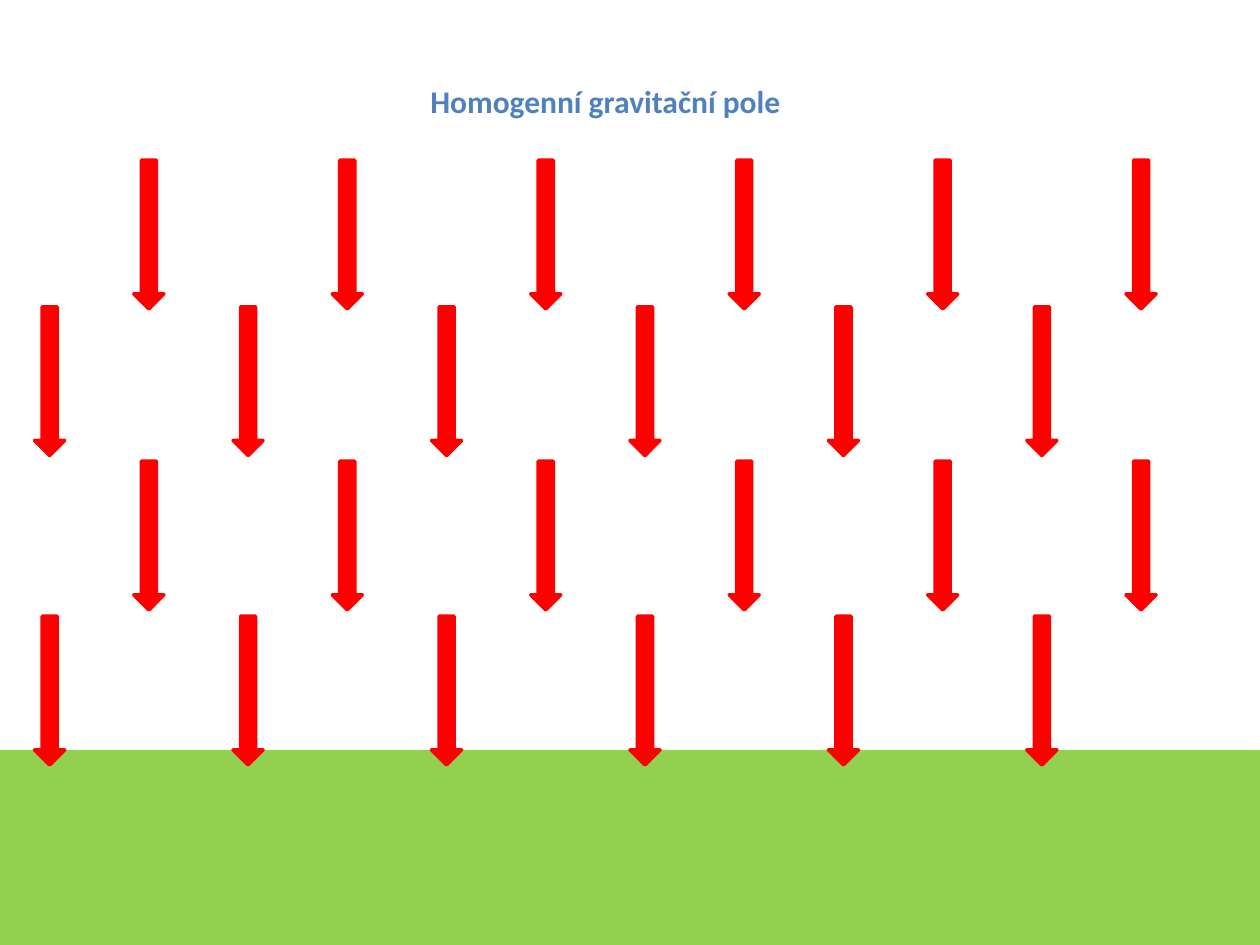
from dataclasses import dataclass

from pptx import Presentation
from pptx.dml.color import RGBColor
from pptx.enum.shapes import MSO_SHAPE
from pptx.enum.text import MSO_ANCHOR, PP_ALIGN
from pptx.util import Pt

RECTANGLE = MSO_SHAPE.RECTANGLE
RIGHT_ARROW = MSO_SHAPE.RIGHT_ARROW
CENTER = PP_ALIGN.CENTER
TOP = MSO_ANCHOR.TOP


@dataclass(frozen=True)
class Theme:
    font: str = "Calibri"
    title_size: float = 18
    title: RGBColor = RGBColor(0x4F, 0x81, 0xBD)
    ground: RGBColor = RGBColor(0x92, 0xD0, 0x50)
    force: RGBColor = RGBColor(0xFF, 0x00, 0x00)


@dataclass(frozen=True)
class ForceRow:
    first_x: float
    center_y: float


THEME = Theme()
ARROWS_PER_ROW = 6
ARROW_STEP = 113.4
ARROW_LENGTH = 85
ARROW_WIDTH = 17.2
LEFT_X = 28.35
SHIFTED_X = LEFT_X + ARROW_STEP / 2
FORCE_ROWS = (
    ForceRow(SHIFTED_X, 134),
    ForceRow(LEFT_X, 217.8),
    ForceRow(SHIFTED_X, 306),
    ForceRow(LEFT_X, 394.6),
)


def write_text(frame, text: str, *, size: float, color: RGBColor,
               bold: bool = False, align=CENTER) -> None:
    frame.word_wrap = True
    frame.vertical_anchor = TOP
    paragraph = frame.paragraphs[0]
    paragraph.alignment = align
    run = paragraph.add_run()
    run.text = text
    run.font.name = THEME.font
    run.font.size = Pt(size)
    run.font.bold = bold
    run.font.color.rgb = color


def draw_ground(slide) -> None:
    ground = slide.shapes.add_shape(RECTANGLE, Pt(-8.6), Pt(428.6), Pt(774), Pt(124.6))
    ground.shadow.inherit = False
    ground.fill.solid()
    ground.fill.fore_color.rgb = THEME.ground
    ground.line.fill.background()


def draw_force(slide, center_x: float, center_y: float) -> None:
    force = slide.shapes.add_shape(
        RIGHT_ARROW,
        Pt(center_x - ARROW_LENGTH / 2), Pt(center_y - ARROW_WIDTH / 2),
        Pt(ARROW_LENGTH), Pt(ARROW_WIDTH),
    )
    force.rotation = 90
    force.shadow.inherit = False
    force.fill.solid()
    force.fill.fore_color.rgb = THEME.force
    force.line.color.rgb = THEME.force
    force.line.width = Pt(2)


def main() -> None:
    presentation = Presentation()
    presentation.slide_width, presentation.slide_height = Pt(720), Pt(540)
    slide = presentation.slides.add_slide(presentation.slide_layouts[5])

    title = slide.shapes.title
    title.left, title.top, title.width, title.height = Pt(54), Pt(43.2), Pt(584), Pt(29)
    write_text(title.text_frame, "Homogenní gravitační pole",
               size=THEME.title_size, color=THEME.title, bold=True)

    draw_ground(slide)
    for row in FORCE_ROWS:
        for column in range(ARROWS_PER_ROW):
            draw_force(slide, row.first_x + column * ARROW_STEP, row.center_y)

    presentation.save("out.pptx")


if __name__ == "__main__":
    main()
